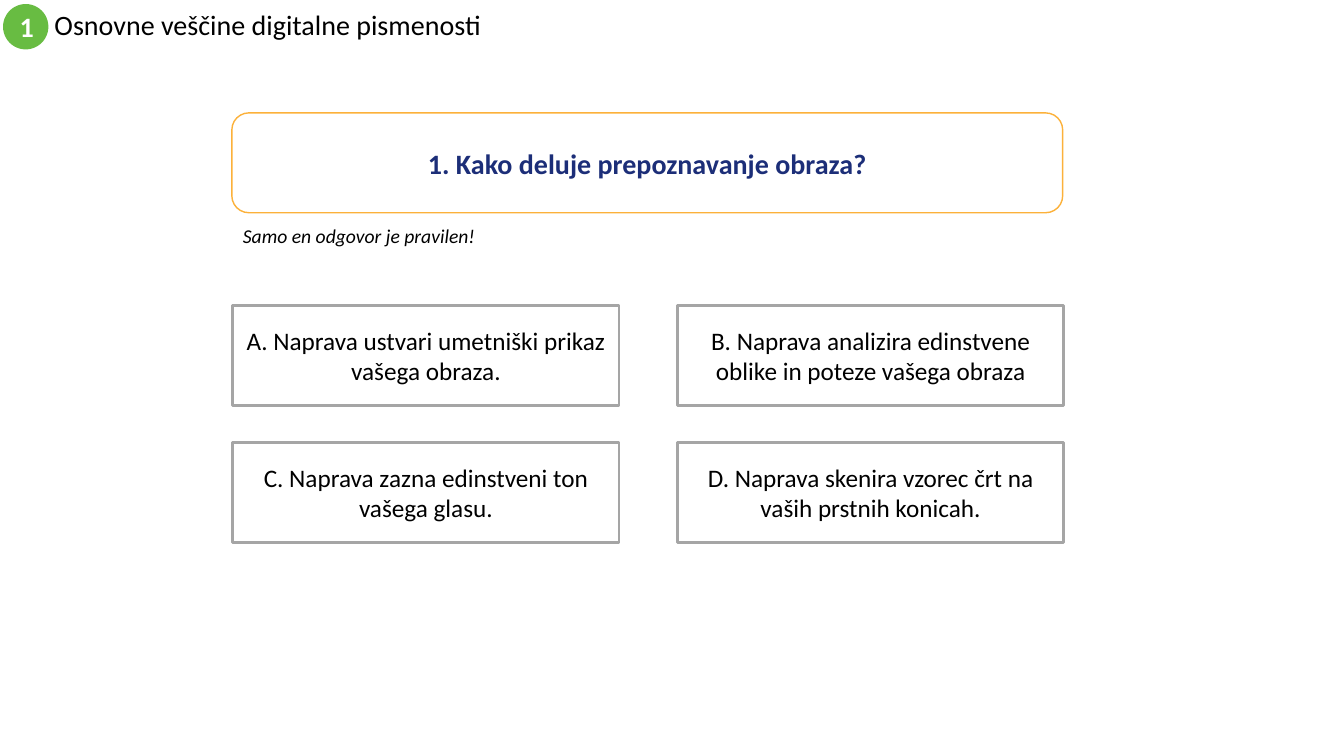
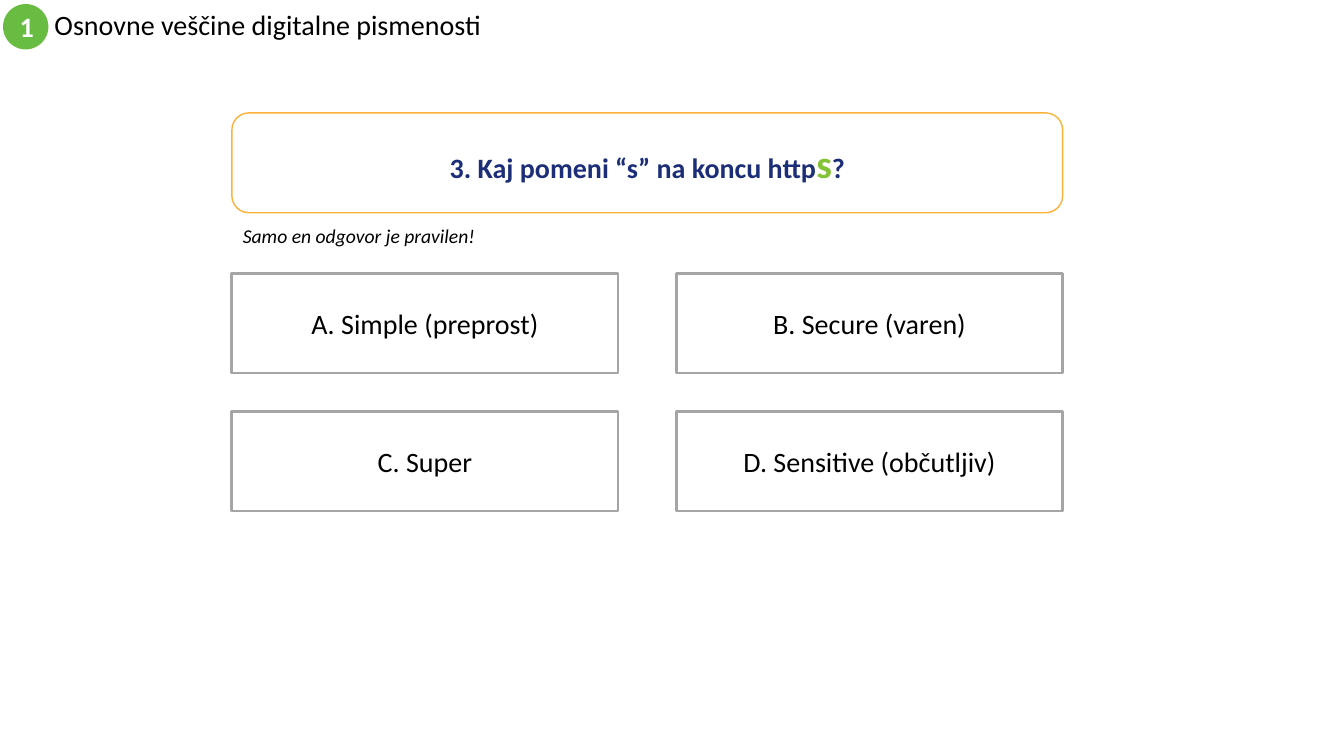
from dataclasses import dataclass

from pptx import Presentation
from pptx import util as u
from pptx.dml.color import RGBColor
from pptx.enum import shapes, text

PX = 9144  # EMU per px, 100 px to the inch
FONT = "Calibri"
COLORS = {
    "white": "FFFFFF",
    "black": "000000",
    "badge": "68BC42",
    "question": "1C2E78",
    "question_border": "FCB13A",
    "highlight": "84C337",
    "answer_border": "A5A5A5",
}
TITLE_ONLY = 5
ANSWER_WIDTH, ANSWER_HEIGHT = 383, 99
COLUMN_STEP = 441


@dataclass(frozen=True)
class Box:
    left: int
    top: int
    width: int
    height: int

    def emu(self) -> tuple:
        return tuple(u.Emu(px * PX) for px in (self.left, self.top, self.width, self.height))


@dataclass(frozen=True)
class Span:
    text: str
    size: int = 20
    color: str = "question"


@dataclass(frozen=True)
class Quiz:
    question: tuple[Span, ...]
    answers: tuple[str, ...]
    answer_size: int
    grid_left: int
    grid_top: int
    row_step: int
    hint_width: int


QUIZZES = (
    Quiz(
        (Span("1. Kako deluje prepoznavanje obraza?"),),
        (
            "A. Naprava ustvari umetniški prikaz vašega obraza.",
            "B. Naprava analizira edinstvene oblike in poteze vašega obraza",
            "C. Naprava zazna edinstveni ton vašega glasu.",
            "D. Naprava skenira vzorec črt na vaših prstnih konicah.",
        ),
        answer_size=18, grid_left=231, grid_top=303, row_step=136, hint_width=505,
    ),
    Quiz(
        (
            Span("3. Kaj pomeni “s” na koncu http"),
            Span("s", 28, "highlight"),
            Span("?"),
        ),
        ("A. Simple (preprost)", "B. Secure (varen)", "C. Super", "D. Sensitive (občutljiv)"),
        answer_size=20, grid_left=230, grid_top=271, row_step=137, hint_width=383,
    ),
)


def rgb(name: str) -> RGBColor:
    return RGBColor.from_string(COLORS[name])


def style_font(font, size: int, color: str, bold: bool = False, italic: bool = False) -> None:
    font.name = FONT
    font.size = u.Pt(size)
    font.bold = bold
    font.italic = italic
    font.color.rgb = rgb(color)


def add_panel(slide, kind, box: Box, fill: str, border: str = "", border_width: int = 1):
    """Add a filled shape and return it with its centred paragraph."""
    shape = slide.shapes.add_shape(kind, *box.emu())
    shape.shadow.inherit = False
    shape.fill.solid()
    shape.fill.fore_color.rgb = rgb(fill)
    if border:
        shape.line.color.rgb = rgb(border)
        shape.line.width = u.Pt(border_width)
    else:
        shape.line.fill.background()
    frame = shape.text_frame
    frame.word_wrap = True
    frame.vertical_anchor = text.MSO_ANCHOR.MIDDLE
    paragraph = frame.paragraphs[0]
    paragraph.alignment = text.PP_ALIGN.CENTER
    return shape, paragraph


def add_header(slide) -> None:
    # Title
    title = slide.shapes.title
    title.left, title.top, title.width, title.height = Box(44, 4, 800, 45).emu()
    frame = title.text_frame
    frame.text = "Osnovne veščine digitalne pismenosti"
    frame.auto_size = text.MSO_AUTO_SIZE.NONE
    frame.vertical_anchor = text.MSO_ANCHOR.MIDDLE
    paragraph = frame.paragraphs[0]
    paragraph.alignment = text.PP_ALIGN.LEFT
    paragraph.line_spacing = 0.9
    style_font(paragraph.font, 20, "black")

    # Chapter badge
    _, paragraph = add_panel(slide, shapes.MSO_SHAPE.OVAL, Box(3, 4, 45, 45), "badge")
    paragraph.text = "1"
    style_font(paragraph.font, 20, "white", bold=True)


def add_question(slide, spans: tuple[Span, ...]) -> None:
    shape, paragraph = add_panel(
        slide, shapes.MSO_SHAPE.ROUNDED_RECTANGLE, Box(230, 112, 824, 99),
        "white", "question_border",
    )
    shape.adjustments[0] = 0.17
    for span in spans:
        run = paragraph.add_run()
        run.text = span.text
        style_font(run.font, span.size, span.color, bold=True)


def add_hint(slide, width: int) -> None:
    frame = slide.shapes.add_textbox(*Box(231, 217, width, 34).emu()).text_frame
    frame.word_wrap = True
    frame.auto_size = text.MSO_AUTO_SIZE.SHAPE_TO_FIT_TEXT
    paragraph = frame.paragraphs[0]
    paragraph.text = "Samo en odgovor je pravilen!"
    style_font(paragraph.font, 14, "black", italic=True)


def add_answers(slide, quiz: Quiz) -> None:
    for index, answer in enumerate(quiz.answers):
        row, column = divmod(index, 2)
        box = Box(
            quiz.grid_left + column * COLUMN_STEP,
            quiz.grid_top + row * quiz.row_step,
            ANSWER_WIDTH,
            ANSWER_HEIGHT,
        )
        _, paragraph = add_panel(
            slide, shapes.MSO_SHAPE.RECTANGLE, box, "white", "answer_border", 2
        )
        paragraph.text = answer
        style_font(paragraph.font, quiz.answer_size, "black")


def main() -> None:
    presentation = Presentation()
    presentation.slide_width = u.Emu(1333 * PX)
    presentation.slide_height = u.Emu(750 * PX)
    for quiz in QUIZZES:
        slide = presentation.slides.add_slide(presentation.slide_layouts[TITLE_ONLY])
        add_header(slide)
        add_question(slide, quiz.question)
        add_hint(slide, quiz.hint_width)
        add_answers(slide, quiz)
    presentation.save("out.pptx")


if __name__ == "__main__":
    main()
